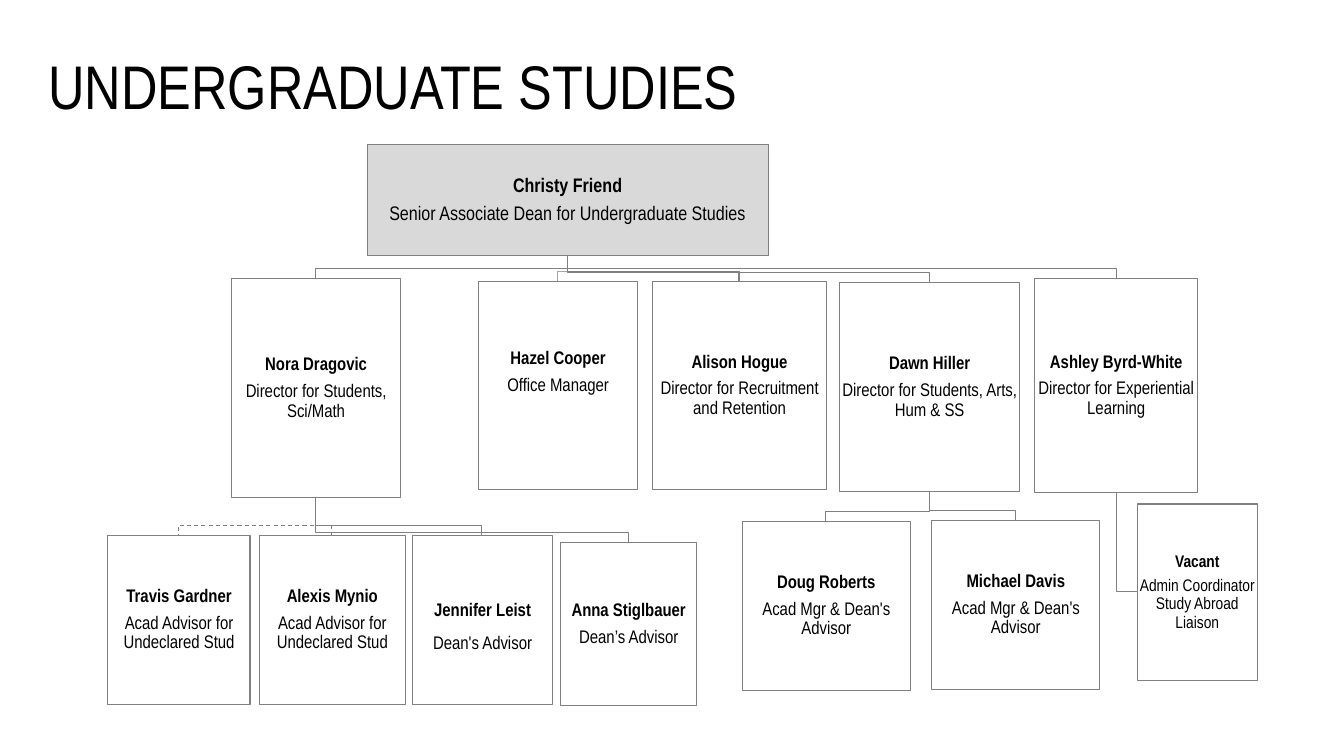
import pptx
import pptx.util
import pptx.dml.color
import pptx.enum.dml
import pptx.enum.shapes
import pptx.enum.text
from collections import namedtuple

PX = 9144
FONT = "Arial Narrow"
DROP = 10

Box = namedtuple("Box", "left top width height")
Person = namedtuple("Person", "name role box style link", defaults=({}, {}))

DEAN = Person("Christy Friend", "Senior Associate Dean for Undergraduate Studies",
              Box(364, 143, 398, 111), {"size": 14, "fill": "D9D9D9"})
NORA = Person("Nora Dragovic", "Director for Students, Sci/Math", Box(230, 276, 167, 218))
HAZEL = Person("Hazel Cooper", "Office Manager", Box(475, 279, 157, 207),
               {"bottom_inset": 28}, {"color": "A6A6A6", "width": 0.25})
ALISON = Person("Alison Hogue", "Director for Recruitment and Retention", Box(647, 279, 173, 207))
DAWN = Person("Dawn Hiller", "Director for Students, Arts, Hum & SS", Box(833, 280, 178, 208))
ASHLEY = Person("Ashley Byrd-White", "Director for Experiential Learning", Box(1026, 276, 162, 213))
DIRECTORS = [NORA, HAZEL, ALISON, DAWN, ASHLEY]

DASHED = {"dashed": True}
ADVISORS = [
    Person("Travis Gardner", "Acad Advisor for Undeclared Stud", Box(107, 531, 141, 168), {}, DASHED),
    Person("Alexis Mynio", "Acad Advisor for Undeclared Stud", Box(257, 531, 145, 168), {}, DASHED),
    Person("Jennifer Leist", "Dean's Advisor", Box(409, 531, 139, 168), {"spacing": 1.5, "gap": 0}),
    Person("Anna Stiglbauer", "Dean’s Advisor", Box(556, 538, 135, 162)),
]
MANAGERS = [
    Person("Doug Roberts", "Acad Mgr & Dean's Advisor", Box(736, 517, 167, 168)),
    Person("Michael Davis", "Acad Mgr & Dean's Advisor", Box(924, 516, 167, 168)),
]
COORDINATOR = Person("Vacant", "Admin Coordinator Study Abroad Liaison",
                     Box(1128, 500, 119, 175), {"size": 12, "fill": None})


def rgb(value):
    return pptx.dml.color.RGBColor.from_string(value)


def place(shape, box):
    shape.left, shape.top, shape.width, shape.height = (length * PX for length in box)


def write(paragraph, text, size=13, bold=False, color="000000", spacing=0.9, after=0,
          align=pptx.enum.text.PP_ALIGN.CENTER):
    paragraph.text = text
    paragraph.alignment = align
    paragraph.line_spacing = spacing
    paragraph.space_before = pptx.util.Pt(0)
    paragraph.space_after = pptx.util.Pt(after)
    font = paragraph.runs[0].font
    font.name = FONT
    font.size = pptx.util.Pt(size)
    font.bold = bold
    font.color.rgb = rgb(color)


def add_title(slide, box, text):
    title = slide.shapes.title
    place(title, box)
    frame = title.text_frame
    frame.auto_size = pptx.enum.text.MSO_AUTO_SIZE.NONE
    frame.vertical_anchor = pptx.enum.text.MSO_ANCHOR.MIDDLE
    write(frame.paragraphs[0], text, size=44, align=pptx.enum.text.PP_ALIGN.LEFT)


def format_line(line, color="808080", width=0.75, dashed=False):
    line.color.rgb = rgb(color)
    line.width = pptx.util.Pt(width)
    if dashed:
        line.dash_style = pptx.enum.dml.MSO_LINE.DASH


def add_path(slide, points, **line_style):
    builder = slide.shapes.build_freeform(*points[0], scale=PX)
    builder.add_line_segments(points[1:], close=False)
    shape = builder.convert_to_shape()
    shape.shadow.inherit = False
    shape.fill.background()
    format_line(shape.line, **line_style)


def add_card(slide, person, size=13, fill="FFFFFF", spacing=0.9, gap=0.38, bottom_inset=1):
    rectangle = pptx.enum.shapes.MSO_SHAPE.RECTANGLE
    shape = slide.shapes.add_shape(rectangle, *(length * PX for length in person.box))
    shape.shadow.inherit = False
    if fill:
        shape.fill.solid()
        shape.fill.fore_color.rgb = rgb(fill)
    else:
        shape.fill.background()
    format_line(shape.line)
    frame = shape.text_frame
    frame.word_wrap = True
    frame.vertical_anchor = pptx.enum.text.MSO_ANCHOR.MIDDLE
    frame.margin_left = frame.margin_right = frame.margin_top = PX
    frame.margin_bottom = bottom_inset * PX
    write(frame.paragraphs[0], person.name, size=size, bold=True, spacing=spacing, after=size * gap)
    write(frame.add_paragraph(), person.role, size=size, spacing=spacing)


def bottom_middle(box):
    return box.left + box.width // 2, box.top + box.height


def add_team(slide, lead, members):
    start_x, start_y = bottom_middle(lead.box)
    for member in members:
        end_x = bottom_middle(member.box)[0]
        end_y = member.box.top
        bend_y = end_y - DROP
        points = [(start_x, start_y), (start_x, bend_y), (end_x, bend_y), (end_x, end_y)]
        add_path(slide, points, **member.link)
    for member in members:
        add_card(slide, member, **member.style)


def add_assistant(slide, lead, assistant):
    start_x, start_y = bottom_middle(lead.box)
    middle_y = assistant.box.top + assistant.box.height // 2
    add_path(slide, [(start_x, start_y), (start_x, middle_y), (assistant.box.left, middle_y)])
    add_card(slide, assistant, **assistant.style)


def main():
    presentation = pptx.Presentation()
    presentation.slide_width = 1333 * PX
    presentation.slide_height = 750 * PX
    slide = presentation.slides.add_slide(presentation.slide_layouts[5])
    add_title(slide, Box(38, 16, 1150, 145), "UNDERGRADUATE STUDIES")
    add_card(slide, DEAN, **DEAN.style)
    add_team(slide, DEAN, DIRECTORS)
    add_team(slide, NORA, ADVISORS)
    add_team(slide, DAWN, MANAGERS)
    add_assistant(slide, ASHLEY, COORDINATOR)
    presentation.save("out.pptx")


if __name__ == "__main__":
    main()
